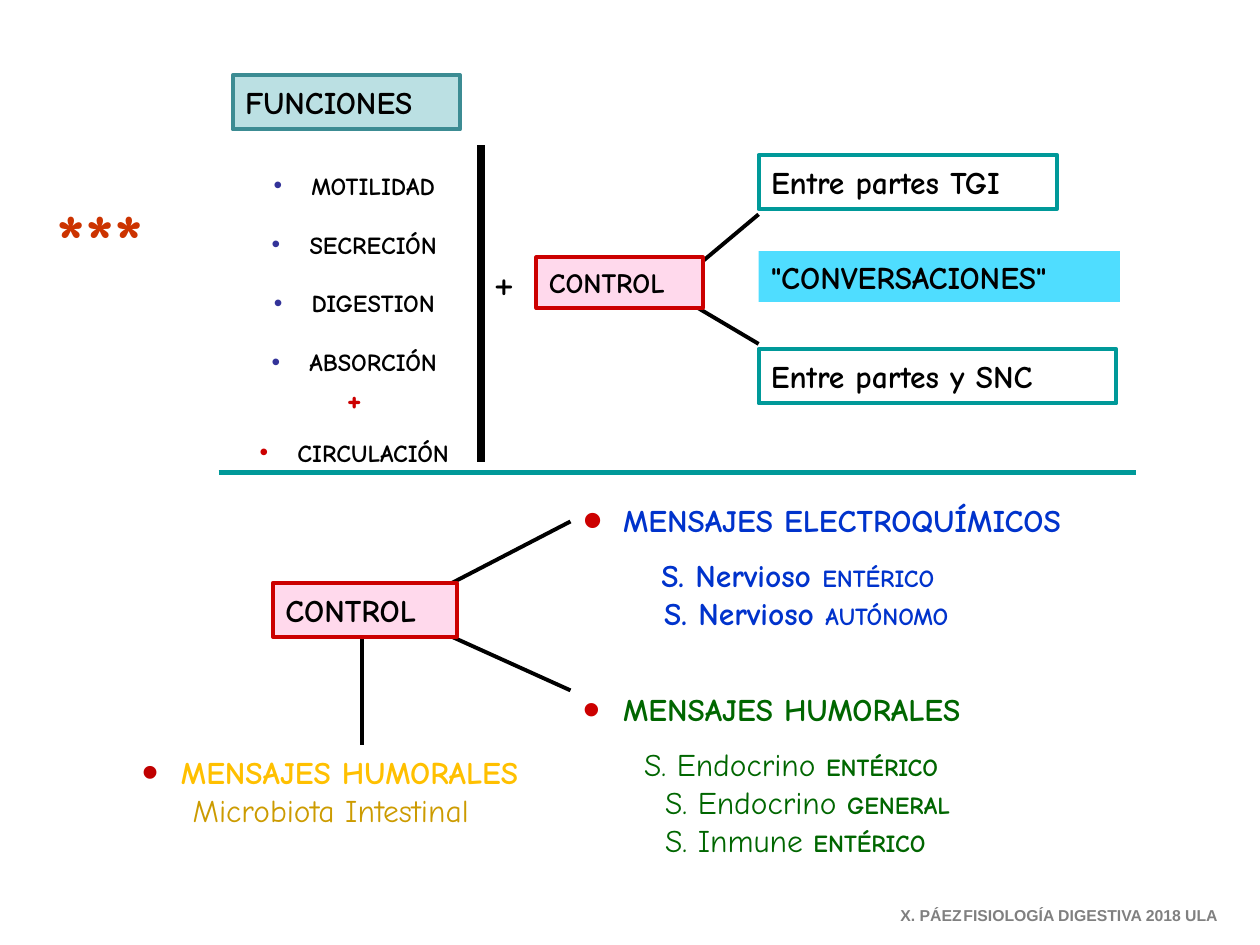
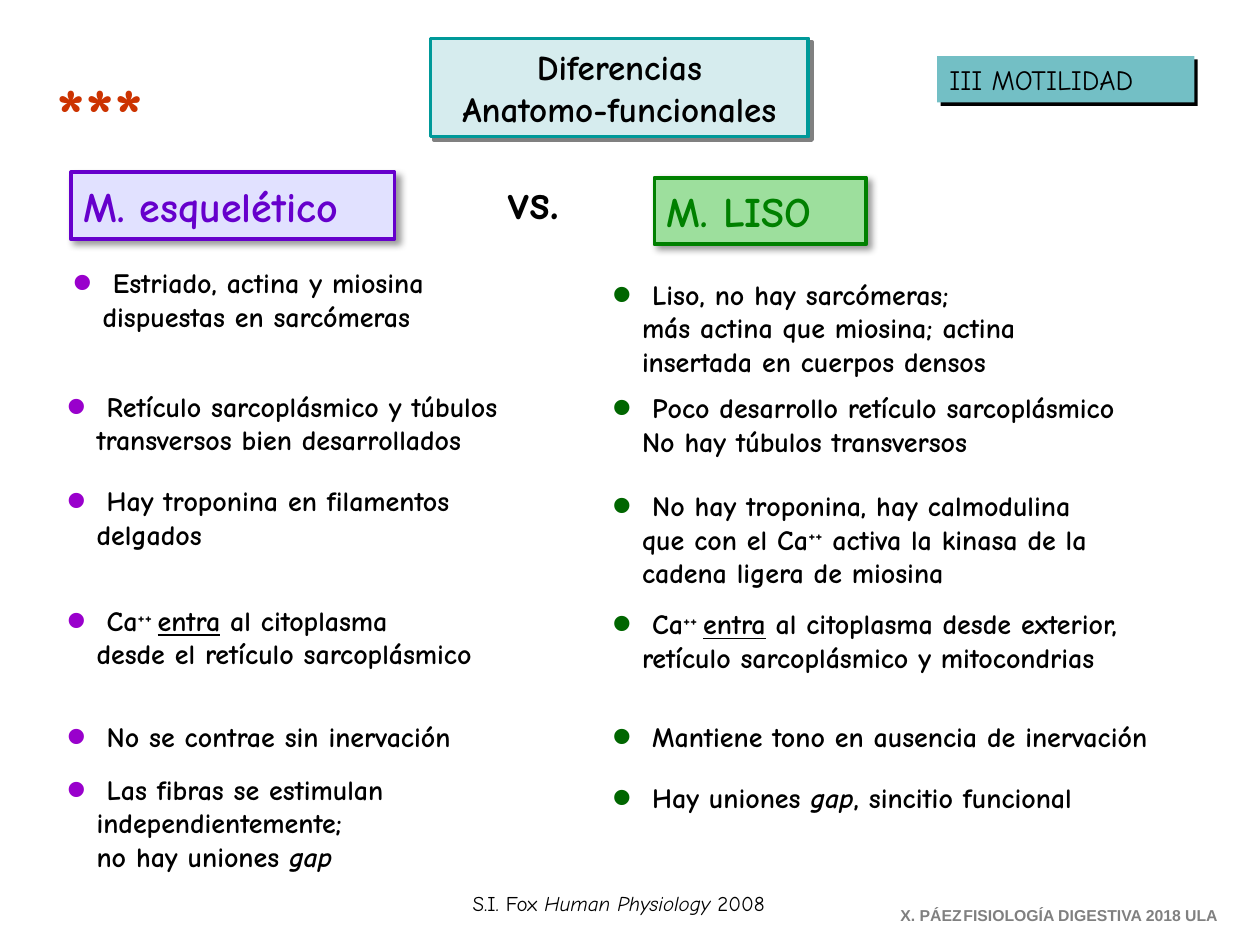
from dataclasses import dataclass

from lxml.etree import SubElement
from pptx import Presentation
from pptx.dml.color import RGBColor
from pptx.enum.shapes import MSO_CONNECTOR as CONNECTOR, MSO_SHAPE as SHAPE
from pptx.enum.text import MSO_ANCHOR as ANCHOR, MSO_AUTO_SIZE as AUTO_SIZE, PP_ALIGN as ALIGN
from pptx.oxml.ns import qn
from pptx.util import Pt

BLACK = RGBColor(0, 0, 0)
GRAY = RGBColor(0x80, 0x80, 0x80)
RED = RGBColor(0xCC, 0, 0)
DARK_RED = RGBColor(0xC0, 0, 0)
ORANGE = RGBColor(0xCC, 0x33, 0)
PINK = RGBColor(0xFF, 0xD9, 0xEC)
TEAL = RGBColor(0, 0x99, 0x99)
DEEP_TEAL = RGBColor(0x3C, 0x8C, 0x93)
MID_TEAL = RGBColor(0x73, 0xBF, 0xC5)
LIGHT_TEAL = RGBColor(0xBB, 0xE0, 0xE3)
PALE_TEAL = RGBColor(0xD6, 0xEC, 0xEE)
CYAN = RGBColor(0x4F, 0xDD, 0xFF)
INDIGO = RGBColor(0x33, 0x33, 0x99)
BLUE = RGBColor(0, 0x33, 0xCC)
DARK_GREEN = RGBColor(0, 0x66, 0)
GREEN = RGBColor(0, 0x80, 0)
LIGHT_GREEN = RGBColor(0x9D, 0xDF, 0x9D)
VIOLET = RGBColor(0x66, 0, 0xCC)
PURPLE = RGBColor(0x99, 0, 0xCC)
LAVENDER = RGBColor(0xE1, 0xE1, 0xFF)
GOLD = RGBColor(0xFF, 0xC0, 0)
DARK_GOLD = RGBColor(0xCC, 0x9B, 0)
COMIC = "Comic Neue"


@dataclass
class Span:
    text: str
    size: float = 16
    color: RGBColor = BLACK
    bold: bool = True
    italic: bool = False
    underline: bool = False
    raised: bool = False
    font: str = COMIC


@dataclass
class Line:
    spans: list
    indent: float = 0
    bullet: RGBColor = None
    bullet_size: int = 100
    before: float = 0
    align: ALIGN = ALIGN.LEFT


def add_bullet(para, color, percent):
    props = para._p.get_or_add_pPr()
    SubElement(SubElement(props, qn("a:buClr")), qn("a:srgbClr"), val=str(color))
    SubElement(props, qn("a:buSzPct"), val=str(percent * 1000))
    SubElement(props, qn("a:buFont"), typeface="Arial")
    SubElement(props, qn("a:buChar"), char="•")


def add_span(para, span):
    run = para.add_run()
    run.text = span.text
    font = run.font
    font.name, font.size = span.font, Pt(span.size)
    font.bold, font.italic, font.underline = span.bold, span.italic, span.underline
    font.color.rgb = span.color
    if span.raised:
        run._r.get_or_add_rPr().set("baseline", "30000")


def write(box, lines, anchor=ANCHOR.TOP):
    frame = box.text_frame
    frame.word_wrap = True
    frame.auto_size = AUTO_SIZE.NONE
    frame.vertical_anchor = anchor
    for number, line in enumerate(lines):
        para = frame.add_paragraph() if number else frame.paragraphs[0]
        para.alignment = line.align
        para.space_before = Pt(line.before)
        props = para._p.get_or_add_pPr()
        props.set("marL", str(Pt(line.indent)))
        props.set("indent", str(-Pt(line.indent) if line.bullet else 0))
        if line.bullet:
            add_bullet(para, line.bullet, line.bullet_size)
        for span in line.spans:
            add_span(para, span)


def add_text(page, left, top, width, height, lines):
    box = page.shapes.add_textbox(Pt(left), Pt(top), Pt(width), Pt(height))
    write(box, lines)
    return box


def drop_shadow(effects, color, alpha, blur, distance):
    shadow = SubElement(effects, qn("a:outerShdw"), blurRad=str(Pt(blur)),
                        dist=str(Pt(distance)), dir="2700000", algn="tl", rotWithShape="0")
    tint = SubElement(shadow, qn("a:srgbClr"), val=str(color))
    SubElement(tint, qn("a:alpha"), val=str(alpha * 1000))


def paint(box, fill, outline, shadow=None):
    if fill is None:
        box.fill.background()
    else:
        box.fill.solid()
        box.fill.fore_color.rgb = fill
    if outline is None:
        box.line.fill.background()
    else:
        box.line.color.rgb = outline
        box.line.width = Pt(2.25)
    box.shadow.inherit = False
    if shadow:
        drop_shadow(box._element.spPr.find(qn("a:effectLst")), *shadow)


def add_label(page, left, top, width, height, span, fill=None, outline=None, shadow=None):
    box = page.shapes.add_shape(SHAPE.RECTANGLE, Pt(left), Pt(top), Pt(width), Pt(height))
    paint(box, fill, outline, shadow)
    write(box, [Line([span])], ANCHOR.MIDDLE)


def add_line(page, x1, y1, x2, y2, color=BLACK, width=2.25):
    line = page.shapes.add_connector(CONNECTOR.STRAIGHT, Pt(x1), Pt(y1), Pt(x2), Pt(y2))
    line.line.color.rgb = color
    line.line.width = Pt(width)
    SubElement(line._element.spPr, qn("a:effectLst"))


def add_stars(page, left, top):
    box = add_text(page, left, top, 108, 60, [Line([Span("***", 44, ORANGE)])])
    props = box.text_frame.paragraphs[0].runs[0]._r.get_or_add_rPr()
    effects = SubElement(props, qn("a:effectLst"))
    drop_shadow(effects, BLACK, 100, 0, 2.8)
    props.find(qn("a:solidFill")).addnext(effects)


def add_footer(page):
    credit = Span("X. PÁEZ\tFISIOLOGÍA DIGESTIVA 2018 ULA", 9, GRAY, font="Arial")
    box = add_text(page, 507.5, 514, 210, 18, [Line([credit])])
    props = box.text_frame.paragraphs[0]._p.get_or_add_pPr()
    SubElement(SubElement(props, qn("a:tabLst")), qn("a:tab"), pos=str(Pt(42.8)), algn="l")


def functions_panel(page, left, top):
    add_label(page, left + 8, top, 130, 31, Span("FUNCIONES", 18), LIGHT_TEAL, DEEP_TEAL)
    names = ["MOTILIDAD", "SECRECIÓN", "DIGESTION", "ABSORCIÓN"]
    lines = [Line([Span(name, 14)], 21.6, INDIGO, before=16.8 if number else 0, align=ALIGN.CENTER)
             for number, name in enumerate(names)]
    lines.append(Line([Span("+", 20, RED)], align=ALIGN.CENTER))
    lines.append(Line([Span("CIRCULACIÓN", 14)], 21.6, RED, before=10.8, align=ALIGN.CENTER))
    add_text(page, left + 14, top + 51, 127, 176, lines)
    add_line(page, left + 150, top + 40, left + 150, top + 221, width=4.5)
    add_line(page, left, top + 227, left + 524, top + 227, TEAL, 3)


def conversations_panel(page, left, top):
    add_text(page, left, top + 51, 28, 41, [Line([Span("+", 28, bold=False)])])
    add_line(page, left + 124.5, top + 62.5, left + 158.5, top + 34)
    add_line(page, left + 123, top + 87, left + 158.5, top + 108)
    add_label(page, left + 31.5, top + 58.5, 95, 29, Span("CONTROL"), PINK, RED)
    for offset, width, height, text, fill, outline in [
        (0, 170.5, 31, "Entre partes TGI", None, TEAL),
        (55, 206.5, 29, '"CONVERSACIONES"', CYAN, None),
        (111, 204.5, 31, "Entre partes y SNC", None, TEAL),
    ]:
        add_label(page, left + 158.5, top + offset, width, height, Span(text, 18), fill, outline)


def messages_panel(page, left, top):
    for x1, y1, x2, y2 in [(184.5, 50, 252, 15), (184.5, 81, 252, 111.5), (133, 81, 133, 142.5)]:
        add_line(page, left + x1, top + y1, left + x2, top + y2)
    add_label(page, left + 82, top + 50, 105, 31, Span("CONTROL", 18), PINK, RED)

    def heading(text, color, percent, before=0):
        return Line([Span(text, 18, color)], 23, RED, percent, before)

    def system(name, kind, color, bold, indent, before=0):
        return Line([Span(name + " ", 18, color, bold), Span(kind, 14, color)], indent, before=before)

    add_text(page, left + 252, top, 329, 212, [
        heading("MENSAJES ELECTROQUÍMICOS", BLUE, 178),
        system("S. Nervioso", "ENTÉRICO", BLUE, True, 44.8, 9.6),
        system("S. Nervioso", "AUTÓNOMO", BLUE, True, 46.5),
        heading("MENSAJES HUMORALES", DARK_GREEN, 156, 33.6),
        system("S. Endocrino", "ENTÉRICO", DARK_GREEN, False, 35, 9.6),
        system("S. Endocrino", "GENERAL", DARK_GREEN, False, 47),
        system("S. Inmune", "ENTÉRICO", DARK_GREEN, False, 47),
    ])
    add_text(page, left, top + 144, 266, 51, [
        Line([Span("MENSAJES HUMORALES", 18, GOLD)], 22.3, DARK_RED, 150),
        Line([Span("Microbiota Intestinal", 18, DARK_GOLD, False)], 29),
    ])


def muscle_column(page, left, top, items, color):
    for shift, offset, rows in items:
        lines = []
        for number, row in enumerate(rows):
            spans = [Span(row)] if isinstance(row, str) else row
            lines.append(Line(spans, 17.1) if number else Line(spans, 22.9, color, 200))
        add_text(page, left + shift, top + offset, 357, 20 * len(rows) + 7, lines)


def calcium_entry(ending):
    return [Span("Ca"), Span("++ ", raised=True), Span("entra", underline=True), Span(ending)]


SKELETAL = [
    (3.5, 0, ["Estriado, actina y miosina", "dispuestas en sarcómeras"]),
    (0, 70.5, ["Retículo sarcoplásmico y túbulos", "transversos bien desarrollados"]),
    (0, 124.5, ["Hay troponina en filamentos", "delgados"]),
    (0, 193, [calcium_entry(" al citoplasma"), "desde el retículo sarcoplásmico"]),
    (0, 259.5, ["No se contrae sin inervación"]),
    (0, 289.5, ["Las fibras se estimulan", "independientemente;",
                [Span("no hay uniones "), Span("gap", italic=True)]]),
]
SMOOTH = [
    (0, 6.5, ["Liso, no hay sarcómeras;", "más actina que miosina; actina",
              "insertada en cuerpos densos"]),
    (0, 71.5, ["Poco desarrollo retículo sarcoplásmico", "No hay túbulos transversos"]),
    (0, 127.5, ["No hay troponina, hay calmodulina",
                [Span("que con el Ca"), Span("++", raised=True), Span(" activa la kinasa de la")],
                "cadena ligera de miosina"]),
    (0, 195, [calcium_entry(" al citoplasma desde exterior,"),
              "retículo sarcoplásmico y mitocondrias"]),
    (0, 259.5, ["Mantiene tono en ausencia de inervación"]),
    (0, 294, [[Span("Hay uniones "), Span("gap", italic=True), Span(", sincitio funcional")]]),
]


def headings_band(page, left, top):
    soft = (BLACK, 40, 4, 3)
    add_label(page, left, top, 185, 38, Span("M. esquelético", 24, VIOLET), LAVENDER, VIOLET, soft)
    add_text(page, left + 237.5, top - 4.5, 54, 41, [Line([Span("vs.", 28)], align=ALIGN.CENTER)])
    add_label(page, left + 333.5, top + 3, 121, 38, Span("M. LISO", 24, GREEN),
              LIGHT_GREEN, GREEN, soft)


def place_title(page, left, top, width, height, rows):
    title = page.shapes.title
    title.left, title.top, title.width, title.height = Pt(left), Pt(top), Pt(width), Pt(height)
    paint(title, PALE_TEAL, TEAL, (GRAY, 100, 0, 2.8))
    write(title, [Line([Span(row, 20)], align=ALIGN.CENTER) for row in rows], ANCHOR.MIDDLE)


def build_control_slide(deck):
    page = deck.slides.add_slide(deck.slide_layouts[6])
    add_stars(page, 25, 106.5)
    functions_panel(page, 125, 43)
    conversations_panel(page, 275, 88.5)
    messages_panel(page, 74, 283)
    add_footer(page)


def build_muscle_slide(deck):
    page = deck.slides.add_slide(deck.slide_layouts[5])
    place_title(page, 246, 22, 216, 56, ["Diferencias", "Anatomo-funcionales"])
    add_stars(page, 25, 34.5)
    add_label(page, 535.5, 32, 147, 26.5, Span("III MOTILIDAD", bold=False), MID_TEAL,
              shadow=(BLACK, 100, 0, 2.8))
    headings_band(page, 40.5, 98.5)
    muscle_column(page, 31, 148.3, SKELETAL, PURPLE)
    muscle_column(page, 342.7, 148.3, SMOOTH, DARK_GREEN)
    add_text(page, 263, 505.5, 194, 22, [Line([
        Span("S.I. Fox ", 12, bold=False),
        Span("Human Physiology", 12, bold=False, italic=True),
        Span(" 2008", 12, bold=False),
    ])])
    add_footer(page)


def main():
    deck = Presentation()
    deck.slide_width, deck.slide_height = Pt(720), Pt(540)
    build_control_slide(deck)
    build_muscle_slide(deck)
    deck.save("out.pptx")


if __name__ == "__main__":
    main()
